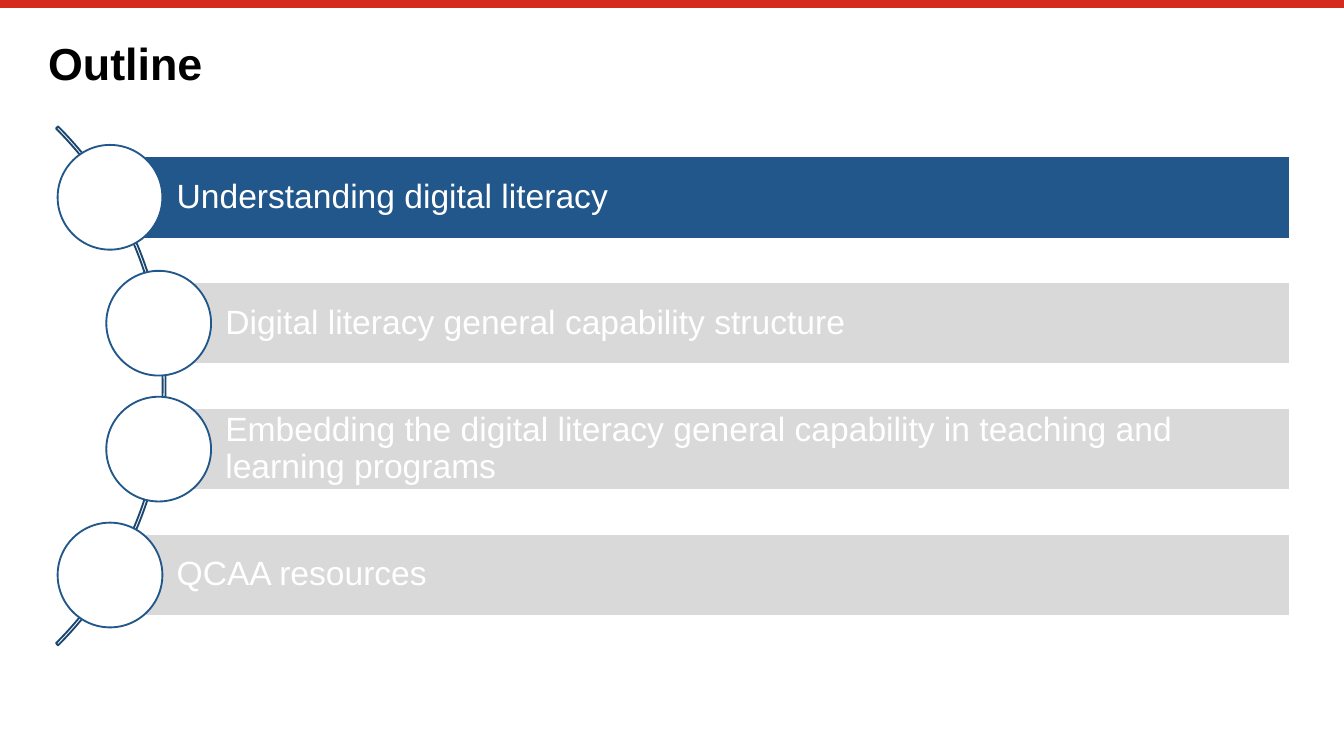
"""Build the outline slide with four agenda bars along an arc."""
import pptx
import pptx.dml.color
import pptx.enum.shapes
import pptx.enum.text
import pptx.util

Cm = pptx.util.Cm
Pt = pptx.util.Pt
RGBColor = pptx.dml.color.RGBColor
SHAPE = pptx.enum.shapes.MSO_SHAPE

RED = RGBColor(0xD5, 0x2B, 0x1E)
BLUE = RGBColor(0x21, 0x57, 0x8A)
NAVY = RGBColor(0x1A, 0x46, 0x6F)
GREY = RGBColor(0xD9, 0xD9, 0xD9)
WHITE = RGBColor(0xFF, 0xFF, 0xFF)
BLACK = RGBColor(0x00, 0x00, 0x00)


def add_box(kind, left, top, width, height, fill=None, line=None):
    box = page.shapes.add_shape(kind, Cm(left), Cm(top), Cm(width), Cm(height))
    box.shadow.inherit = False
    if fill is None:
        box.fill.background()
    else:
        box.fill.solid()
        box.fill.fore_color.rgb = fill
    box.line.color.rgb = line
    box.line.width = Pt(1)
    return box


def write(box, text, size=18, color=WHITE, bold=False, insets=(0, 0, 0, 0)):
    frame = box.text_frame
    frame.word_wrap = True
    frame.vertical_anchor = pptx.enum.text.MSO_ANCHOR.MIDDLE
    frame.margin_left, frame.margin_top, frame.margin_right, frame.margin_bottom = map(Cm, insets)
    para = frame.paragraphs[0]
    para.alignment = pptx.enum.text.PP_ALIGN.LEFT
    para.line_spacing = 0.9
    span = para.add_run()
    span.text = text
    span.font.name = "Arial"
    span.font.size = Pt(size)
    span.font.bold = bold
    span.font.color.rgb = color


deck = pptx.Presentation()
deck.slide_width = Cm(25.4)
deck.slide_height = Cm(14.29)
page = deck.slides.add_slide(deck.slide_layouts[6])

rule = page.shapes.add_connector(
    pptx.enum.shapes.MSO_CONNECTOR.STRAIGHT, 0, Cm(0.08), deck.slide_width, Cm(0.08))
rule.line.color.rgb = RED
rule.line.width = Pt(4.2)
properties = rule.element.spPr
properties.append(properties.makeelement(pptx.oxml.ns.qn("a:effectLst"), {}))

title = page.shapes.add_textbox(Cm(0.91), Cm(0.76), Cm(23.6), Cm(0.99))
write(title, "Outline", size=24, color=BLACK, bold=True)

arc = add_box(SHAPE.BLOCK_ARC, -10.74, 0.36, 13.87, 13.87, line=NAVY)
for index, value in enumerate((189, 27, 0.004)):
    arc.adjustments[index] = value

RIGHT = 24.38
FIRST_MIDDLE = 3.73
PITCH = 2.38
BAR_HEIGHT = 1.56
CIRCLE = 1.98

topics = [
    ("Understanding digital literacy", 2.08, BLUE),
    ("Digital literacy general capability structure", 3, GREY),
    ("Embedding the digital literacy general capability in teaching and learning programs", 3, GREY),
    ("QCAA resources", 2.08, GREY),
]
for index, (topic, left, fill) in enumerate(topics):
    middle = FIRST_MIDDLE + index * PITCH
    bar = add_box(SHAPE.RECTANGLE, left, middle - BAR_HEIGHT / 2, RIGHT - left, BAR_HEIGHT,
                  fill=fill, line=WHITE)
    write(bar, topic, insets=(1.26, 0.13, 0.13, 0.13))
    add_box(SHAPE.OVAL, left - CIRCLE / 2, middle - CIRCLE / 2, CIRCLE, CIRCLE,
            fill=WHITE, line=BLUE)

deck.save("out.pptx")
